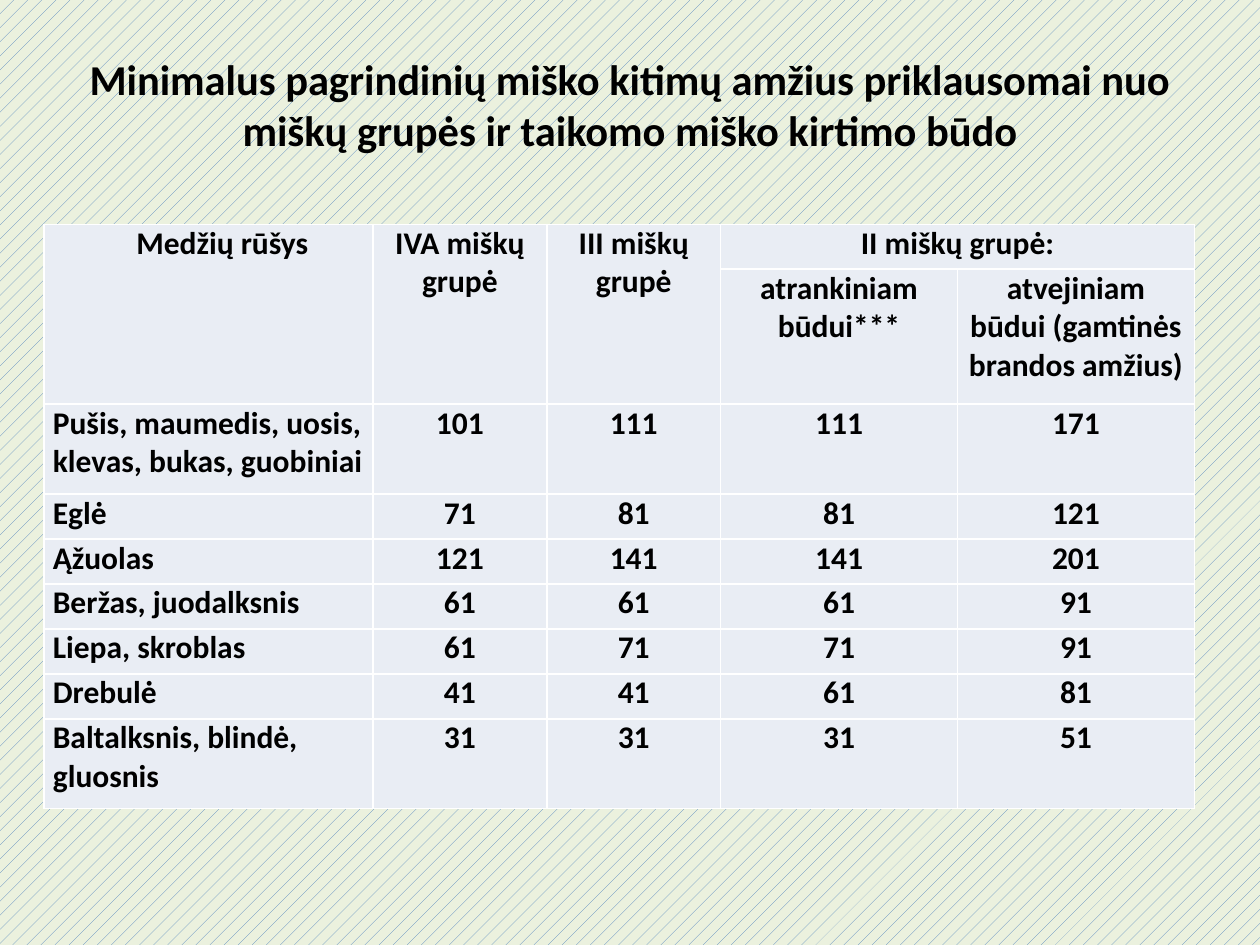
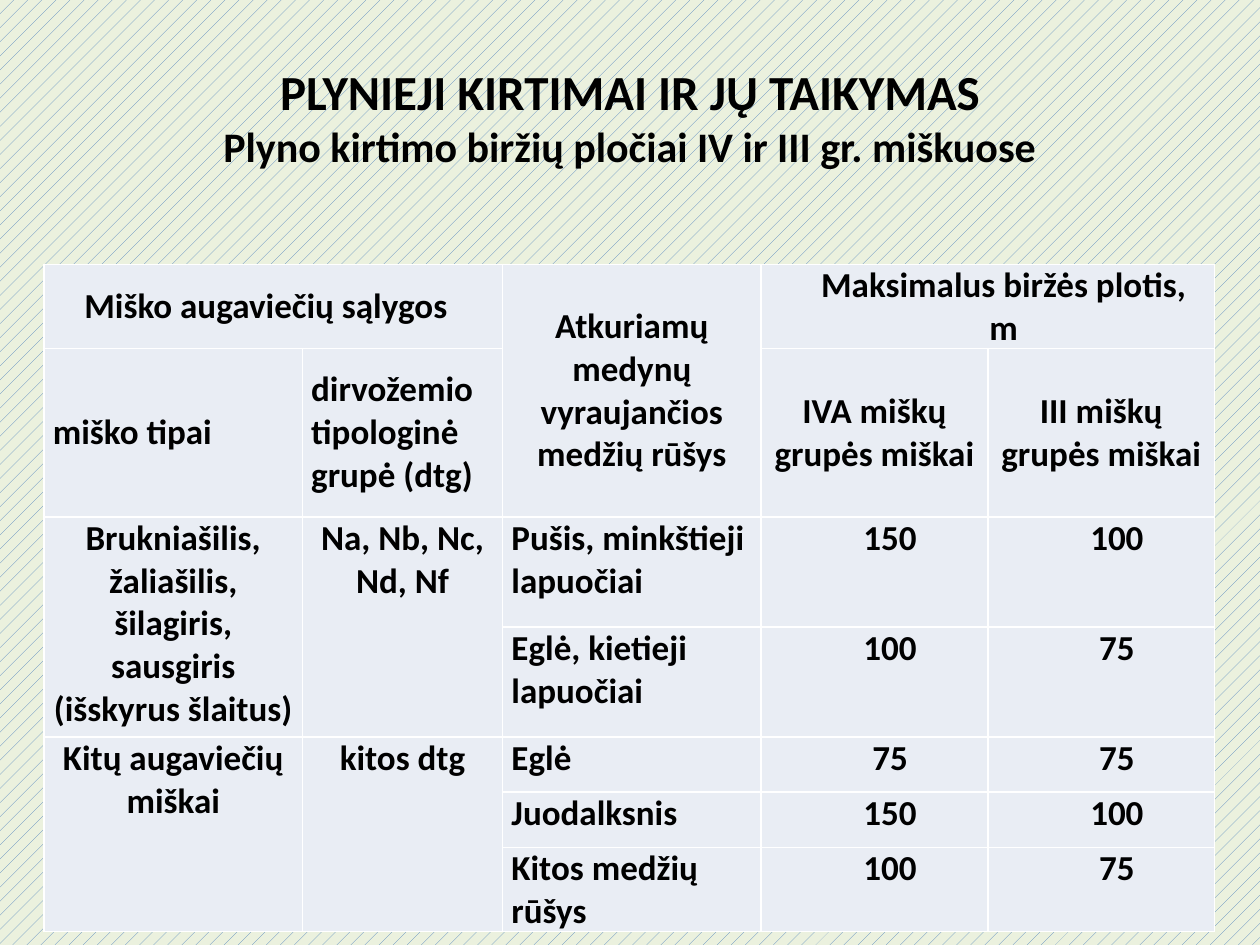
from dataclasses import dataclass

from pptx import Presentation
from pptx.dml.color import RGBColor
from pptx.enum.dml import MSO_PATTERN
from pptx.enum.text import MSO_ANCHOR, PP_ALIGN
from pptx.util import Inches, Length, Pt

WIDTH, HEIGHT = Inches(10), Inches(7.5)
FONT = "Calibri"
COLORS = {"ink": "000000", "cell": "E9EDF4", "page": "EBF1DE", "hatch": "4F81BD"}


@dataclass(frozen=True)
class Line:
    text: str
    size: float


@dataclass(frozen=True)
class Look:
    """Alignment, left margin and first-line indent of a cell, in inches."""
    align: PP_ALIGN
    margin: float = 0
    indent: float = 0


@dataclass(frozen=True)
class Grid:
    """A table; top, unit and cols are percentages of the slide's size."""
    top: float
    unit: float
    cols: tuple[float, ...]
    rows: tuple[int, ...]
    size: float
    cells: tuple[tuple[str, ...], ...]
    looks: tuple[str, ...]
    spans: tuple[tuple[int, int, int, int], ...]
    middle: int = 0


@dataclass(frozen=True)
class Page:
    title: tuple[Line, ...]
    lift: float
    grid: Grid


LOOKS = {
    "l": Look(PP_ALIGN.LEFT),
    "c": Look(PP_ALIGN.CENTER),
    "j": Look(PP_ALIGN.JUSTIFY),
    "f": Look(PP_ALIGN.CENTER, indent=0.22),
    "m": Look(PP_ALIGN.CENTER, margin=0.25),
    "s": Look(PP_ALIGN.JUSTIFY, margin=0.25),
}

AGES = Grid(
    top=23.73, unit=4.76, size=18,
    cols=(26.1, 13.8, 13.8, 18.8, 18.8),
    rows=(1, 3, 2, 1, 1, 1, 1, 1, 2),
    cells=(
        ("Medžių rūšys", "IVA miškų grupė", "III miškų grupė", "II miškų grupė:", ""),
        ("", "", "", "atrankiniam būdui***",
         "atvejiniam būdui (gamtinės brandos amžius)"),
        ("Pušis, maumedis, uosis, klevas, bukas, guobiniai", "101", "111", "111", "171"),
        ("Eglė", "71", "81", "81", "121"),
        ("Ąžuolas", "121", "141", "141", "201"),
        ("Beržas, juodalksnis", "61", "61", "61", "91"),
        ("Liepa, skroblas", "61", "71", "71", "91"),
        ("Drebulė", "41", "41", "61", "81"),
        ("Baltalksnis, blindė, gluosnis", "31", "31", "31", "51"),
    ),
    looks=("fcccc",) + ("lcccc",) * 8,
    spans=((0, 0, 1, 0), (0, 1, 1, 1), (0, 2, 1, 2), (0, 3, 0, 4)),
)

WIDTHS = Grid(
    top=28, unit=5.83, size=20, middle=2,
    cols=(20.5, 15.9, 20.5, 18, 18),
    rows=(1, 3, 2, 2, 1, 1, 1),
    cells=(
        ("Miško augaviečių sąlygos", "", "Atkuriamų medynų vyraujančios medžių rūšys",
         "Maksimalus biržės plotis,\vm", ""),
        ("miško tipai", "dirvožemio tipologinė grupė (dtg)", "",
         "IVA miškų grupės miškai", "III miškų grupės miškai"),
        ("Brukniašilis, žaliašilis, šilagiris, sausgiris (išskyrus šlaitus)",
         "Na, Nb, Nc, Nd, Nf", "Pušis, minkštieji lapuočiai", "150", "100"),
        ("", "", "Eglė, kietieji lapuočiai", "100", "75"),
        ("Kitų augaviečių miškai", "kitos dtg", "Eglė", "75", "75"),
        ("", "", "Juodalksnis", "150", "100"),
        ("", "", "Kitos medžių rūšys", "100", "75"),
    ),
    looks=("sccmc", "jjccc", "cclmm", "cclmm", "ccjmm", "ccjmm", "cclmm"),
    spans=((0, 0, 0, 1), (0, 2, 1, 2), (0, 3, 0, 4), (2, 0, 3, 0),
           (2, 1, 3, 1), (4, 0, 6, 0), (4, 1, 6, 1)),
)

PAGES = (
    Page((Line("Minimalus pagrindinių miško kitimų amžius priklausomai nuo "
               "miškų grupės ir taikomo miško kirtimo būdo", 24.3),), 0.2, AGES),
    Page((Line("PLYNIEJI KIRTIMAI IR JŲ TAIKYMAS", 28),
          Line("Plyno kirtimo biržių pločiai IV ir III gr. miškuose", 24)), 0, WIDTHS),
)


def color(name: str) -> RGBColor:
    return RGBColor.from_string(COLORS[name])


def across(part: float) -> Length:
    return Length(round(WIDTH * part / 100))


def down(part: float) -> Length:
    return Length(round(HEIGHT * part / 100))


def write(para, text: str, size: float, look: Look) -> None:
    props = para._p.get_or_add_pPr()
    props.set("marL", str(Inches(look.margin)))
    props.set("indent", str(Inches(look.indent)))
    para.text = text
    para.alignment = look.align
    font = para.font
    font.name, font.size, font.bold = FONT, Pt(size), True
    font.color.rgb = color("ink")


def paint(slide) -> None:
    """Cover the background with the shared hatch."""
    fill = slide.background.fill
    fill.patterned()
    fill.pattern = MSO_PATTERN.PERCENT_10
    fill.fore_color.rgb = color("hatch")
    fill.back_color.rgb = color("page")


def add_title(slide, lines: tuple[Line, ...], lift: float) -> None:
    box = slide.shapes.add_textbox(across(5), down(4), across(90), down(16.67))
    frame = box.text_frame
    frame.word_wrap = True
    frame.vertical_anchor = MSO_ANCHOR.MIDDLE
    frame.margin_bottom = Inches(0.05 + lift)
    for i, line in enumerate(lines):
        para = frame.add_paragraph() if i else frame.paragraphs[0]
        write(para, line.text, line.size, LOOKS["c"])


def add_grid(slide, grid: Grid) -> None:
    table = slide.shapes.add_table(
        len(grid.rows), len(grid.cols), across(3.5), down(grid.top),
        across(sum(grid.cols)), down(grid.unit * sum(grid.rows))).table
    table.first_row = table.horz_banding = False
    for col, part in zip(table.columns, grid.cols):
        col.width = across(part)
    for row, count in zip(table.rows, grid.rows):
        row.height = down(grid.unit * count)
    for r, (texts, looks) in enumerate(zip(grid.cells, grid.looks)):
        for c, (text, look) in enumerate(zip(texts, looks)):
            cell = table.cell(r, c)
            cell.fill.solid()
            cell.fill.fore_color.rgb = color("cell")
            cell.margin_left = cell.margin_right = Inches(0.07)
            cell.margin_top = cell.margin_bottom = 0
            cell.vertical_anchor = MSO_ANCHOR.MIDDLE if r < grid.middle else MSO_ANCHOR.TOP
            write(cell.text_frame.paragraphs[0], text, grid.size, LOOKS[look])
    for top, left, bottom, right in grid.spans:
        table.cell(top, left).merge(table.cell(bottom, right))


def main() -> None:
    deck = Presentation()
    deck.slide_width, deck.slide_height = WIDTH, HEIGHT
    for page in PAGES:
        slide = deck.slides.add_slide(deck.slide_layouts[6])
        paint(slide)
        add_title(slide, page.title, page.lift)
        add_grid(slide, page.grid)
    deck.save("out.pptx")


if __name__ == "__main__":
    main()
